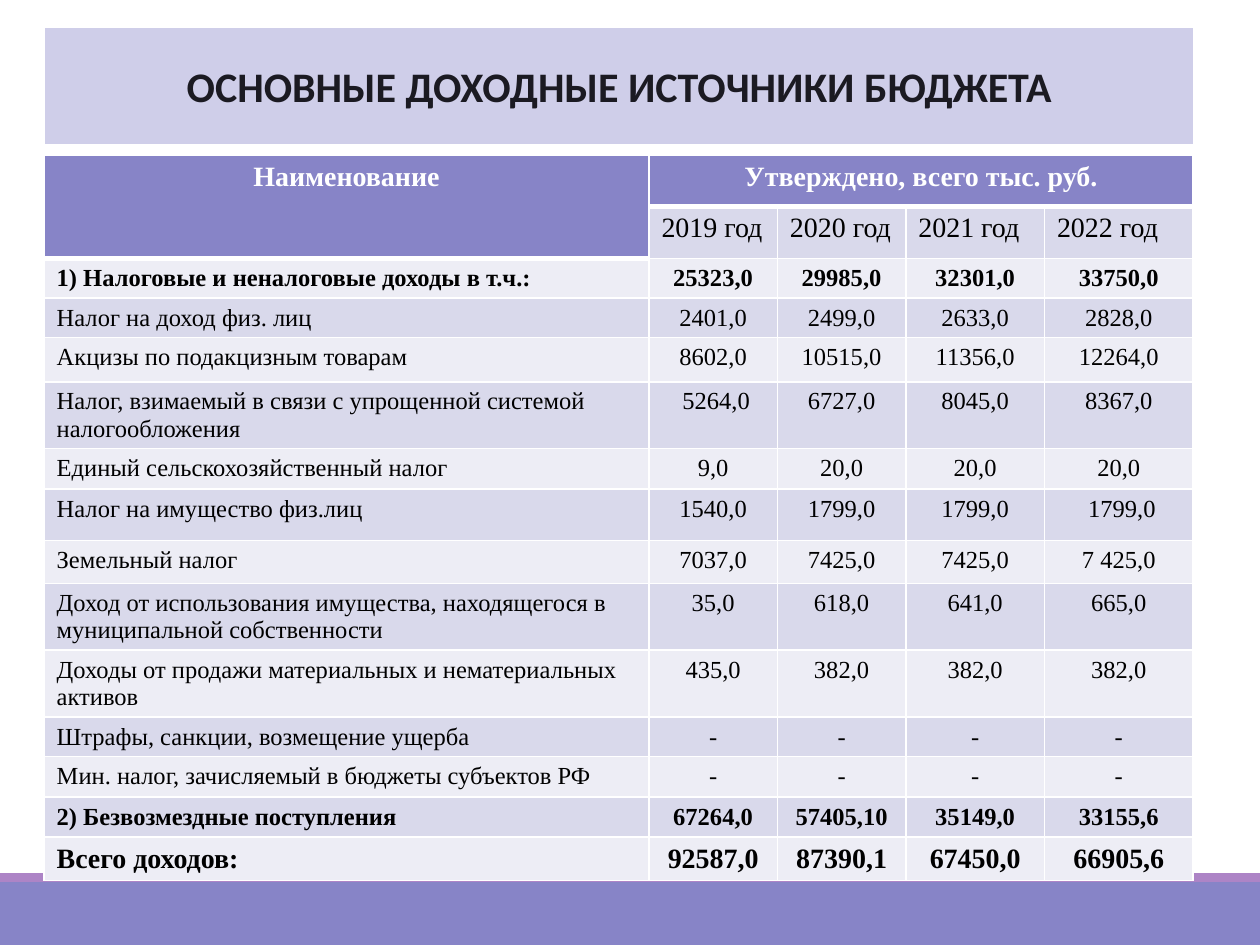
"""Build a slide with a table of the main budget revenue sources."""
from lxml.etree import SubElement
from pptx import Presentation
from pptx.dml.color import RGBColor
from pptx.enum.shapes import MSO_SHAPE
from pptx.enum.text import MSO_ANCHOR, MSO_AUTO_SIZE, PP_ALIGN
from pptx.oxml import parse_xml
from pptx.oxml.ns import nsdecls, qn
from pptx.util import Inches, Pt

TITLE = "ОСНОВНЫЕ ДОХОДНЫЕ ИСТОЧНИКИ БЮДЖЕТА"
NAME_HEAD, AMOUNT_HEAD = "Наименование", "Утверждено, всего тыс. руб."
YEARS = ["2019 год", "2020 год", "2021 год", "2022 год"]
REVENUES = [
    (0.29, "1) Налоговые и неналоговые доходы в т.ч.:", "25323,0", "29985,0", "32301,0", "33750,0"),
    (0.31, "Налог на доход физ. лиц", "2401,0", "2499,0", "2633,0", "2828,0"),
    (0.35, "Акцизы по подакцизным товарам", "8602,0", "10515,0", "11356,0", "12264,0"),
    (0.41, "Налог, взимаемый в связи с упрощенной системой налогообложения",
     " 5264,0", "6727,0", "8045,0", "8367,0"),
    (0.32, "Единый сельскохозяйственный налог", "9,0", "20,0", "20,0", "20,0"),
    (0.41, "Налог на имущество физ.лиц", "1540,0", "1799,0", "1799,0", " 1799,0"),
    (0.34, "Земельный налог", "7037,0", "7425,0", "7425,0", "7 425,0"),
    (0.41, "Доход от использования имущества, находящегося в муниципальной собственности",
     "35,0", "618,0", "641,0", "665,0"),
    (0.41, "Доходы от продажи материальных и нематериальных активов",
     "435,0", "382,0", "382,0", "382,0"),
    (0.29, "Штрафы, санкции, возмещение ущерба", "-", "-", "-", "-"),
    (0.32, "Мин. налог, зачисляемый в бюджеты субъектов РФ", "-", "-", "-", "-"),
    (0.26, "2) Безвозмездные поступления", "67264,0", "57405,10", "35149,0", "33155,6"),
    (0.26, "Всего доходов:", "92587,0", "87390,1", "67450,0", "66905,6"),
]
BOLD_ROWS = {0, len(REVENUES) - 2, len(REVENUES) - 1}
COLUMN_WIDTHS = [4.8, 1.02, 1.02, 1.1, 1.18]
HEAD_HEIGHT = 0.41
LEFT, WIDTH = 0.35, 9.13
VIOLET, MAUVE, LILAC, WHITE, BLACK = "8784C7", "AD84C6", "CFCEE9", "FFFFFF", "000000"
BANDS = ["EDEDF5", "D9D9EB"]


def paint(fill, color):
    fill.solid()
    fill.fore_color.rgb = RGBColor.from_string(color)


def write(frame, text, size=14, color=BLACK, bold=False, align=PP_ALIGN.CENTER,
          font="Times New Roman"):
    paragraph = frame.paragraphs[0]
    paragraph.alignment = align
    run = paragraph.add_run()
    run.text = text
    run.font.size, run.font.bold, run.font.name = Pt(size), bold, font
    run.font.color.rgb = RGBColor.from_string(color)


def add_bar(slide, top, height, color):
    bar = slide.shapes.add_shape(MSO_SHAPE.RECTANGLE, 0, Inches(top), Inches(10), Inches(height))
    bar.shadow.inherit = False
    paint(bar.fill, color)
    bar.line.fill.background()


def add_title(slide):
    title = slide.shapes.title
    title.left, title.top = Inches(LEFT), Inches(0.21)
    title.width, title.height = Inches(WIDTH), Inches(0.94)
    outline = SubElement(title.element.spPr, qn("a:prstGeom"), prst="roundRect")
    SubElement(outline, qn("a:avLst"))
    paint(title.fill, LILAC)
    paint(title.line.fill, WHITE)
    title.line.width = Pt(1.25)
    title.text_frame.auto_size = MSO_AUTO_SIZE.NONE
    title.text_frame.vertical_anchor = MSO_ANCHOR.MIDDLE
    write(title.text_frame, TITLE, size=24, color="1B1A22", bold=True, font="Calibri")


def style_cell(cell, fill, bottom=1):
    paint(cell.fill, fill)
    properties = cell._tc.get_or_add_tcPr()
    for index, (side, width) in enumerate([("L", 1), ("R", 1), ("T", 1), ("B", bottom)]):
        properties.insert(index, parse_xml(
            f'<a:ln{side} {nsdecls("a")} w="{Pt(width)}"><a:solidFill>'
            f'<a:srgbClr val="{WHITE}"/></a:solidFill></a:ln{side}>'))


def add_revenue_table(slide):
    heights = [HEAD_HEIGHT] * 2 + [row[0] for row in REVENUES]
    holder = slide.shapes.add_table(len(heights), len(COLUMN_WIDTHS), Inches(LEFT),
                                    Inches(1.23), Inches(WIDTH), Inches(5.96))
    table = holder.table
    for column, width in zip(table.columns, COLUMN_WIDTHS):
        column.width = Inches(width)
    for row, height in zip(table.rows, heights):
        row.height = Inches(height)
    holder.height = Inches(5.96)

    for column in range(len(COLUMN_WIDTHS)):
        style_cell(table.cell(0, column), VIOLET, bottom=3)
    style_cell(table.cell(1, 0), VIOLET, bottom=3)
    table.cell(0, 0).merge(table.cell(1, 0))
    table.cell(0, 1).merge(table.cell(0, len(YEARS)))
    for column, heading in enumerate([NAME_HEAD, AMOUNT_HEAD]):
        write(table.cell(0, column).text_frame, heading, size=16, color=WHITE, bold=True)
    for column, year in enumerate(YEARS, 1):
        style_cell(table.cell(1, column), BANDS[1])
        write(table.cell(1, column).text_frame, year, size=16, align=PP_ALIGN.LEFT)

    for index, (_, *values) in enumerate(REVENUES):
        size = 16 if index == len(REVENUES) - 1 else 14
        for column, value in enumerate(values):
            cell = table.cell(index + 2, column)
            style_cell(cell, BANDS[index % 2])
            write(cell.text_frame, value, size=size, bold=index in BOLD_ROWS,
                  align=PP_ALIGN.CENTER if column else PP_ALIGN.LEFT)


def main():
    deck = Presentation()
    deck.slide_width, deck.slide_height = Inches(10), Inches(7.5)
    slide = deck.slides.add_slide(deck.slide_layouts[5])
    add_bar(slide, 7, 0.5, VIOLET)
    add_bar(slide, 6.93, 0.07, MAUVE)
    add_title(slide)
    add_revenue_table(slide)
    deck.save("out.pptx")


if __name__ == "__main__":
    main()
